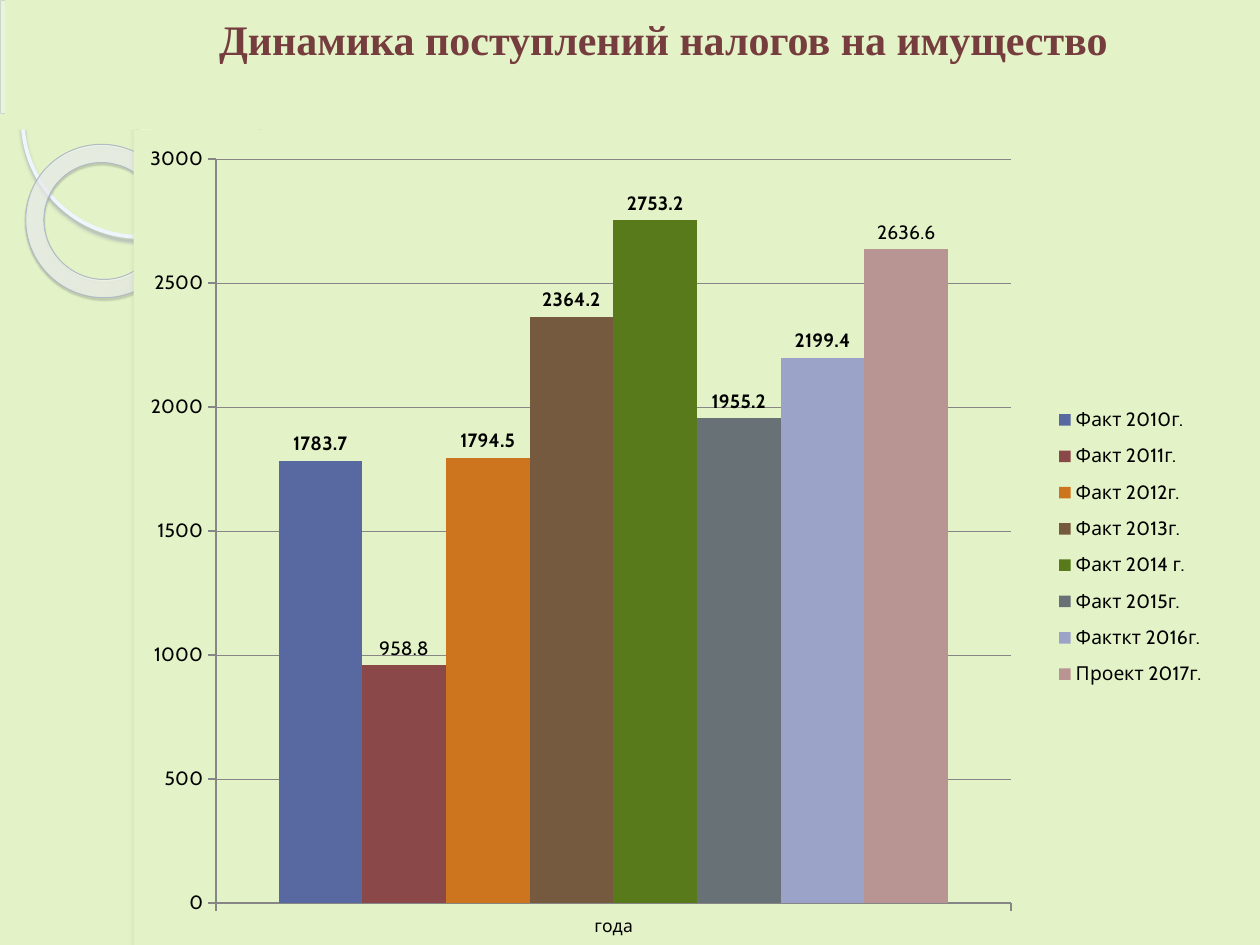
"""Build the slide on property tax revenue by year."""
from lxml import etree
from pptx import Presentation
from pptx.chart.data import CategoryChartData
from pptx.dml.color import RGBColor
from pptx.enum.chart import XL_CHART_TYPE, XL_LABEL_POSITION, XL_LEGEND_POSITION, XL_TICK_MARK
from pptx.enum.shapes import MSO_SHAPE
from pptx.enum.text import MSO_ANCHOR, PP_ALIGN
from pptx.oxml import parse_xml
from pptx.oxml.ns import nsdecls, qn
from pptx.util import Inches, Pt

COLUMN = XL_CHART_TYPE.COLUMN_CLUSTERED
OUTSIDE_END = XL_LABEL_POSITION.OUTSIDE_END
LEGEND_RIGHT = XL_LEGEND_POSITION.RIGHT
TICK_OUT = XL_TICK_MARK.OUTSIDE
PIE, OVAL, DONUT, RECT = MSO_SHAPE.PIE, MSO_SHAPE.OVAL, MSO_SHAPE.DONUT, MSO_SHAPE.RECTANGLE
TOP, CENTER = MSO_ANCHOR.TOP, PP_ALIGN.CENTER

BACKGROUND = "E3F2C7"
AXIS_COLOR = "868686"
TITLE = "Динамика поступлений налогов на имущество"
CATEGORY = "года"
SERIES = [
    ("Факт 2010г.", 1783.7, "5868A0", True),
    ("Факт 2011г.", 958.8, "8A4848", False),
    ("Факт 2012г.", 1794.5, "CC751E", True),
    ("Факт 2013г.", 2364.2, "755A3F", True),
    ("Факт 2014 г.", 2753.2, "587A1B", True),
    ("Факт 2015г.", 1955.2, "687176", True),
    ("Факткт 2016г.", 2199.4, "9BA4C8", True),
    ("Проект 2017г.", 2636.6, "B89492", False),
]
PLOT_LAYOUT = {"x": 0.073, "y": 0.036, "w": 0.706, "h": 0.913}
LEGEND_LAYOUT = {"x": 0.81, "y": 0.326, "w": 0.15, "h": 0.372}
RING_STOPS = [(0, "FAFCFE", 70), (70, "FDFEFF", 55), (100, "BCCCE0", 60)]
RING_FOCUS = {"l": -408, "t": -50, "r": 508, "b": 150}


def rgb(color):
    """Return the colour for a hex string."""
    return RGBColor.from_string(color)


def color_xml(color, alpha):
    """Return a colour element with opacity in percent."""
    return f'<a:srgbClr val="{color}"><a:alpha val="{alpha * 1000}"/></a:srgbClr>'


def add_shape(s, kind, box, fill=None, line=None, width=0):
    """Add a shape without shadow, filled and outlined as given."""
    sp = s.shapes.add_shape(kind, *map(Inches, box))
    sp.shadow.inherit = False
    if fill:
        sp.fill.solid()
        sp.fill.fore_color.rgb = rgb(fill)
    else:
        sp.fill.background()
    if line:
        sp.line.color.rgb = rgb(line)
        sp.line.width = Pt(width)
    else:
        sp.line.fill.background()
    return sp


def add_shadow(sp, color, alpha, blur, dist, angle):
    """Give a shape an outer shadow."""
    effects = sp._element.spPr.find(qn("a:effectLst"))
    effects.append(parse_xml(
        f'<a:outerShdw {nsdecls("a")} blurRad="{Pt(blur)}" dist="{Pt(dist)}" '
        f'dir="{angle * 60000}" algn="tl" rotWithShape="0">{color_xml(color, alpha)}</a:outerShdw>'))


def add_decoration(s):
    """Draw the circles and the panel edge on the left."""
    pie = add_shape(s, PIE, (-0.89, -0.89, 1.79, 1.79), "F9FBFD", "BFC7D1", 0.25)
    pie.adjustments[0], pie.adjustments[1] = 0, 54.02
    color = pie._element.spPr.find(qn("a:solidFill"))[0]
    etree.SubElement(color, qn("a:alpha"), val="33000")

    circle = add_shape(s, OVAL, (0.18, 0.02, 1.86, 1.86), None, "EEF5FD", 2.15)
    add_shadow(circle, "A7ACB3", 85, 2, 2, 90)

    ring = add_shape(s, DONUT, (0.2, 1.15, 1.23, 1.21), None, "B1BAC5", 0.58)
    ring.rotation = 38.6
    ring.adjustments[0] = 0.12
    stops = "".join(f'<a:gs pos="{pos * 1000}">{color_xml(c, alpha)}</a:gs>'
                    for pos, c, alpha in RING_STOPS)
    focus = " ".join(f'{side}="{value * 1000}"' for side, value in RING_FOCUS.items())
    no_fill = ring._element.spPr.find(qn("a:noFill"))
    no_fill.addprevious(parse_xml(
        f'<a:gradFill {nsdecls("a")} rotWithShape="1"><a:gsLst>{stops}</a:gsLst>'
        f'<a:path path="circle"><a:fillToRect {focus}/></a:path></a:gradFill>'))
    no_fill.getparent().remove(no_fill)
    add_shadow(ring, "52555A", 35, 1, 1.2, 75)

    edge = add_shape(s, RECT, (1.11, 0, 0.08, 7.5), "FFFFFF")
    add_shadow(edge, "717477", 25, 3, 3, 180)


def add_title(s):
    """Add the title band."""
    sp = add_shape(s, RECT, (0.04, 0, 9.96, 1.03), BACKGROUND)
    tf = sp.text_frame
    tf.word_wrap = True
    tf.vertical_anchor = TOP
    p = tf.paragraphs[0]
    p.alignment = CENTER
    p.line_spacing = 1.15
    p._p.get_or_add_pPr().set("indent", str(Inches(0.49)))
    r = p.add_run()
    r.text = TITLE
    r.font.name = "Times New Roman"
    r.font.size = Pt(24)
    r.font.bold = True
    r.font.color.rgb = rgb("753D3D")


def set_font(font, size, bold=False):
    """Set the chart font."""
    font.name = "Cabin"
    font.size = Pt(size)
    font.bold = bold
    font.color.rgb = rgb("000000")


def set_line(line, width):
    """Set the colour and width of an axis or grid line."""
    line.color.rgb = rgb(AXIS_COLOR)
    line.width = Pt(width)


def set_layout(parent, index, layout, target=""):
    """Place a chart part by fractions of the chart."""
    for old in parent.findall(qn("c:layout")):
        parent.remove(old)
    modes = '<c:xMode val="edge"/><c:yMode val="edge"/>'
    sizes = "".join(f'<c:{key} val="{value}"/>' for key, value in layout.items())
    parent.insert(index, parse_xml(
        f'<c:layout {nsdecls("c")}><c:manualLayout>{target}{modes}{sizes}</c:manualLayout></c:layout>'))


def add_chart(s):
    """Add the column chart with one series per year."""
    data = CategoryChartData()
    data.categories = [CATEGORY]
    for name, value, _, _ in SERIES:
        data.add_series(name, [value])
    box = map(Inches, (1.06, 1.03, 8.94, 6.47))
    chart = s.shapes.add_chart(COLUMN, *box, data).chart
    chart.has_title = False
    set_font(chart.font, 10)
    chart.has_legend = True
    chart.legend.position = LEGEND_RIGHT
    chart.legend.include_in_layout = False
    set_font(chart.legend.font, 11)

    for axis, size in ((chart.category_axis, 10), (chart.value_axis, 11)):
        axis.major_tick_mark = TICK_OUT
        set_line(axis.format.line, 1)
        set_font(axis.tick_labels.font, size)
    axis = chart.value_axis
    axis.minimum_scale, axis.maximum_scale, axis.major_unit = 0, 3000, 500
    axis.has_major_gridlines = True
    set_line(axis.major_gridlines.format.line, 0.5)

    plot = chart.plots[0]
    plot.gap_width, plot.overlap, plot.vary_by_categories = 150, 0, False
    for series, (_, _, color, bold) in zip(plot.series, SERIES):
        series.format.fill.solid()
        series.format.fill.fore_color.rgb = rgb(color)
        labels = series.data_labels
        labels.show_value = True
        labels.position = OUTSIDE_END
        set_font(labels.font, 11, bold)

    space = chart._chartSpace
    space.find(qn("c:txPr")).addprevious(parse_xml(
        f'<c:spPr {nsdecls("c", "a")}><a:solidFill><a:srgbClr val="{BACKGROUND}"/></a:solidFill>'
        '<a:ln><a:noFill/></a:ln></c:spPr>'))
    set_layout(space.chart.plotArea, 0, PLOT_LAYOUT, '<c:layoutTarget val="inner"/>')
    set_layout(chart.legend._element, 1, LEGEND_LAYOUT)


def main():
    """Build and save the slide."""
    prs = Presentation()
    prs.slide_width, prs.slide_height = Inches(10), Inches(7.5)
    s = prs.slides.add_slide(prs.slide_layouts[6])
    s.background.fill.solid()
    s.background.fill.fore_color.rgb = rgb(BACKGROUND)
    add_decoration(s)
    add_title(s)
    add_chart(s)
    prs.save("out.pptx")


if __name__ == "__main__":
    main()
